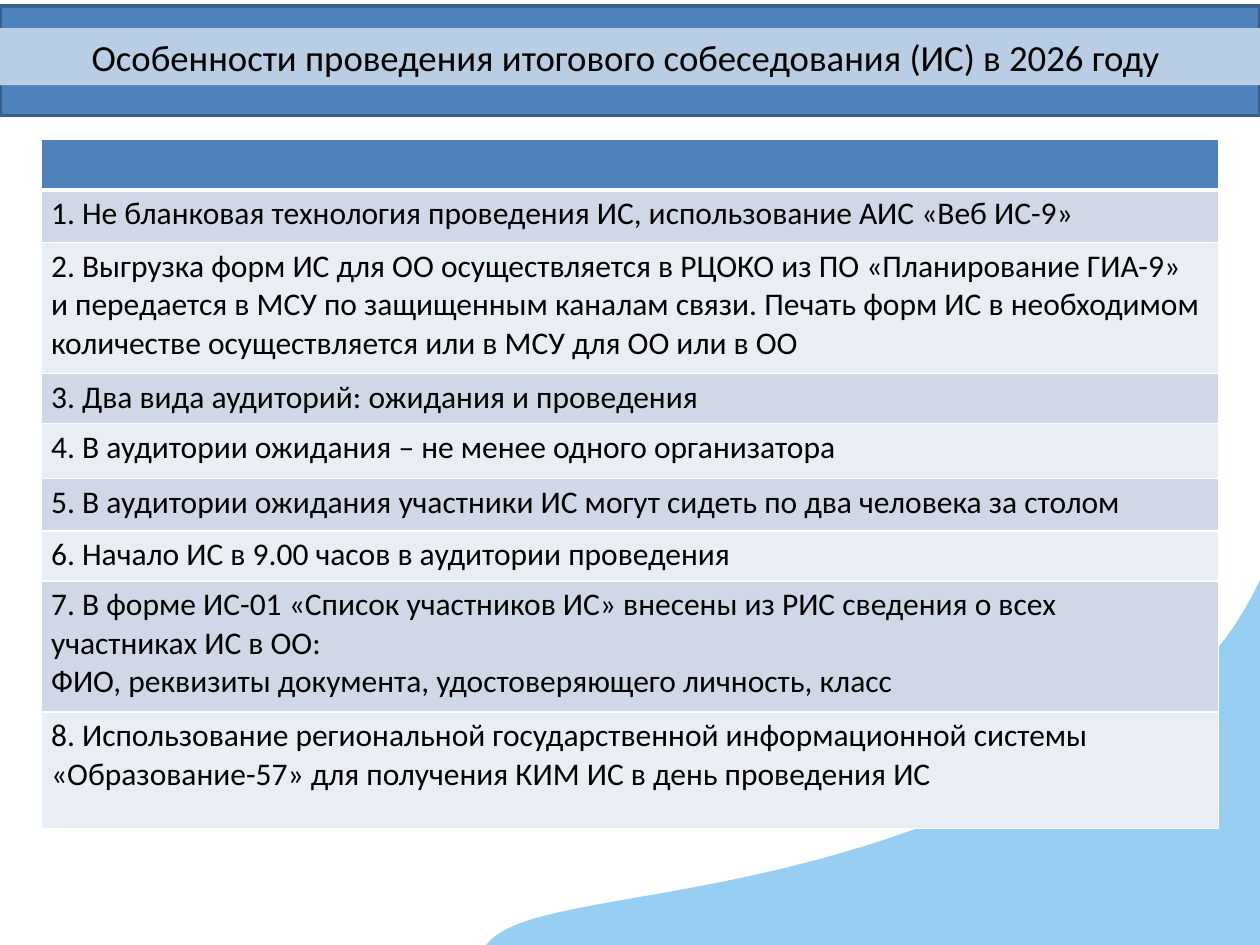
"""Build a slide on how the final interview is held in 2026."""
import pptx
import pptx.dml.color
import pptx.enum.shapes
import pptx.enum.text
import pptx.oxml
import pptx.oxml.ns
import pptx.util
from pptx.util import Cm

SLIDE_WIDTH, SLIDE_HEIGHT = 25.4, 19.05
TITLE = "Особенности проведения итогового собеседования (ИС) в 2026 году "
TABLE_LEFT, TABLE_TOP, TABLE_WIDTH = 0.84, 2.81, 23.72
HEADER_HEIGHT = 1.02
HEADER_FILL = "4F81BD"
BAND_FILLS = ("D0D8E8", "E9EDF4")
RULES = [
    (1.06, ["1. Не бланковая технология проведения ИС, использование АИС «Веб ИС-9»"]),
    (2.64, ["2. Выгрузка форм ИС для ОО осуществляется в РЦОКО из ПО «Планирование ГИА-9» ",
            "и передается в МСУ по защищенным каналам связи. Печать форм ИС в необходимом "
            "количестве осуществляется или в МСУ для ОО или в ОО"]),
    (1.01, ["3. Два вида аудиторий: ожидания и проведения"]),
    (1.11, ["4. В аудитории ожидания – не менее одного организатора"]),
    (1.05, ["5. В аудитории ожидания участники ИС могут сидеть по два человека за столом"]),
    (1.01, ["6. Начало ИС в 9.00 часов в аудитории проведения"]),
    (2.64, ["7. В форме ИС-01 «Список участников ИС» внесены из РИС сведения о всех "
            "участниках ИС в ОО: ",
            "ФИО, реквизиты документа, удостоверяющего личность, класс"]),
    (2.35, ["8. Использование региональной государственной информационной системы "
            "«Образование-57» для получения КИМ ИС в день проведения ИС"]),
]
WAVE_LEFT, WAVE_TOP, WAVE_WIDTH, WAVE_HEIGHT = 9.14, 7.29, 19.41, 13.59
WAVE_ROTATION = 354
WAVE_START = (19.08, 8.23)
WAVE_CURVES = [
    ((19.75, 5.97), (19.36, 0.16), (18.56, 0.03)),
    ((17.76, -0.13), (17.9, 5.29), (14.25, 7.31)),
    ((6.89, 11.47), (0.03, 9.21), (0.02, 11.25)),
    ((-0.02, 13.32), (11.38, 13.95), (14.55, 13.45)),
    ((17.71, 12.94), (18.41, 10.45), WAVE_START),
]


def color(value):
    """Return the colour for a hex string."""
    return pptx.dml.color.RGBColor.from_string(value)


def set_attributes(target, values):
    """Set each attribute named in a dict of format values."""
    for name, value in values.items():
        setattr(target, name, value)


def paint(shape, fill, line=None, line_width=0):
    """Give a shape a flat fill and an optional outline."""
    shape.shadow.inherit = False
    shape.fill.solid()
    shape.fill.fore_color.rgb = color(fill)
    if line:
        shape.line.color.rgb = color(line)
        shape.line.width = pptx.util.Pt(line_width)
    else:
        shape.line.fill.background()


def write(paragraph, lines, size):
    """Write lines of black text into one paragraph."""
    for index, line in enumerate(lines):
        if index:
            paragraph.add_line_break()
        run = paragraph.add_run()
        run.text = line
        set_attributes(run.font, {"name": "Calibri", "size": pptx.util.Pt(size), "bold": False})
        run.font.color.rgb = color("000000")


def element(tag, content="", attributes=""):
    """Return a drawing element with the given content."""
    namespace = pptx.oxml.ns.nsdecls("a")
    return pptx.oxml.parse_xml(f"<a:{tag} {namespace} {attributes}>{content}</a:{tag}>")


def point_xml(point):
    """Return the markup for one outline point."""
    x, y = point
    return f'<a:pt x="{Cm(x)}" y="{Cm(y)}"/>'


def add_wave(slide):
    """Add the translucent wave in the lower right corner."""
    left, top = Cm(WAVE_LEFT), Cm(WAVE_TOP)
    right, bottom = left + Cm(WAVE_WIDTH), top + Cm(WAVE_HEIGHT)
    builder = slide.shapes.build_freeform(left, top)
    builder.add_line_segments([(right, bottom)], close=True)
    wave = builder.convert_to_shape()
    outline = wave._element.spPr.find(".//" + pptx.oxml.ns.qn("a:path"))
    for child in list(outline):
        outline.remove(child)
    outline.append(element("moveTo", point_xml(WAVE_START)))
    for curve in WAVE_CURVES:
        outline.append(element("cubicBezTo", "".join(map(point_xml, curve))))
    outline.append(element("close"))
    wave.rotation = WAVE_ROTATION
    paint(wave, "74BEED")
    fill_color = wave._element.spPr.find(".//" + pptx.oxml.ns.qn("a:srgbClr"))
    fill_color.append(element("alpha", attributes='val="74000"'))


def set_borders(cell, bottom_width):
    """Draw white borders round a cell."""
    properties = cell._tc.get_or_add_tcPr()
    sides = {"lnL": 1, "lnR": 1, "lnT": 1, "lnB": bottom_width}
    for index, (side, width) in enumerate(sides.items()):
        properties.insert(index, element(
            side, '<a:solidFill><a:srgbClr val="FFFFFF"/></a:solidFill>',
            f'w="{pptx.util.Pt(width)}"'))


def format_cell(cell, fill, bottom_width=1):
    """Set the margins, fill and borders of a cell."""
    set_attributes(cell, {"margin_left": Cm(0.19), "margin_right": Cm(0.19),
                          "margin_top": Cm(0.1), "margin_bottom": Cm(0.1)})
    cell.fill.solid()
    cell.fill.fore_color.rgb = color(fill)
    set_borders(cell, bottom_width)


def add_rules_table(slide):
    """Add the table of rules under an empty header row."""
    total_height = HEADER_HEIGHT + sum(height for height, lines in RULES)
    table = slide.shapes.add_table(len(RULES) + 1, 1, Cm(TABLE_LEFT), Cm(TABLE_TOP),
                                   Cm(TABLE_WIDTH), Cm(total_height)).table
    table.rows[0].height = Cm(HEADER_HEIGHT)
    format_cell(table.cell(0, 0), HEADER_FILL, bottom_width=3)
    for index, (height, lines) in enumerate(RULES):
        table.rows[index + 1].height = Cm(height)
        cell = table.cell(index + 1, 0)
        format_cell(cell, BAND_FILLS[index % 2])
        write(cell.text_frame.paragraphs[0], lines, 18)


def add_band(slide, top, height, *paint_values):
    """Add a rectangle across the whole slide."""
    band = slide.shapes.add_shape(pptx.enum.shapes.MSO_SHAPE.RECTANGLE, Cm(0), Cm(top),
                                  Cm(SLIDE_WIDTH), Cm(height))
    paint(band, *paint_values)
    return band


def add_title(slide):
    """Add the title on its two bands."""
    add_band(slide, 0.12, 2.21, HEADER_FILL, "3A5F8C", 2)
    title_band = add_band(slide, 0.57, 1.15, "B9CDE5")
    set_attributes(title_band.text_frame, {
        "word_wrap": True,
        "vertical_anchor": pptx.enum.text.MSO_ANCHOR.TOP,
        "auto_size": pptx.enum.text.MSO_AUTO_SIZE.SHAPE_TO_FIT_TEXT})
    paragraph = title_band.text_frame.paragraphs[0]
    paragraph.alignment = pptx.enum.text.PP_ALIGN.CENTER
    write(paragraph, [TITLE], 21)


def main():
    """Build and save the presentation."""
    presentation = pptx.Presentation()
    set_attributes(presentation, {"slide_width": Cm(SLIDE_WIDTH),
                                  "slide_height": Cm(SLIDE_HEIGHT)})
    slide = presentation.slides.add_slide(presentation.slide_layouts[6])
    add_wave(slide)
    add_rules_table(slide)
    add_title(slide)
    presentation.save("out.pptx")


if __name__ == "__main__":
    main()
